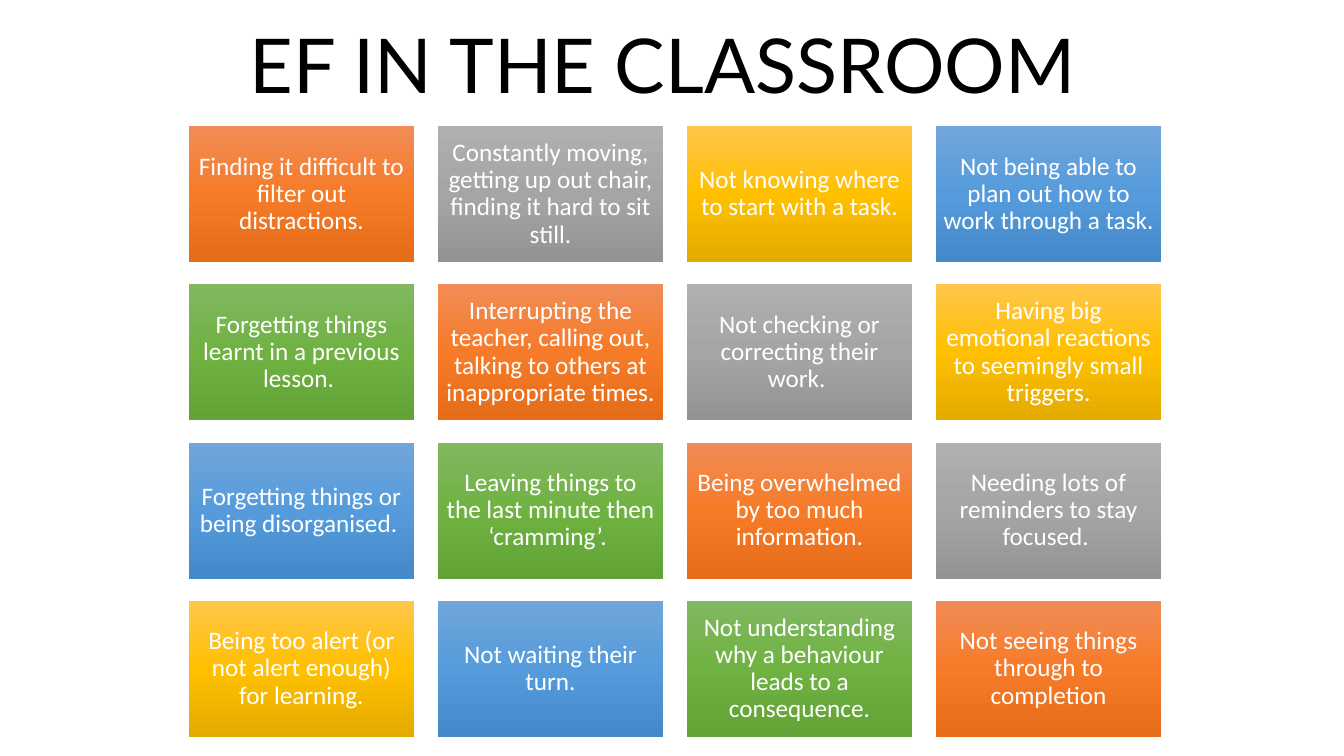
"""Build a slide with a grid of executive function signs in the classroom."""
from copy import deepcopy
from dataclasses import dataclass

from pptx import Presentation
from pptx import util as u
from pptx.dml import color
from pptx.enum import shapes, text
from pptx.oxml import ns


@dataclass(frozen=True)
class Theme:
    head_font: str = "Lato"
    body_font: str = "Calibri"
    head_size: int = 54
    body_size: int = 18
    dark: str = "000000"
    light: str = "FFFFFF"
    fades: tuple = (
        ("F18C57", "F67B28", "E56C19"),
        ("AFAFAF", "A5A5A5", "939393"),
        ("FFC64B", "FFC000", "E3AB00"),
        ("71A6DB", "559BDB", "448ACA"),
        ("81B861", "6FB242", "62A336"),
    )


THEME = Theme()
COLS = 4
LEFT, TOP = 1.87, 1.25
WIDTH, HEIGHT = 2.24, 1.35
STEP_X, STEP_Y = 2.47, 1.57

SIGNS = [
    "Finding it difficult to filter out distractions.",
    "Constantly moving, getting up out chair, finding it hard to sit still.",
    "Not knowing where to start with a task.",
    "Not being able to plan out how to work through a task.",
    "Forgetting things learnt in a previous lesson. ",
    "Interrupting the teacher, calling out, talking to others at inappropriate times.",
    "Not checking or correcting their work. ",
    "Having big emotional reactions to seemingly small triggers.",
    "Forgetting things or being disorganised. ",
    "Leaving things to the last minute then ‘cramming’. ",
    "Being overwhelmed by too much information.",
    "Needing lots of reminders to stay focused. ",
    "Being too alert (or not alert enough) for learning.",
    "Not waiting their turn.",
    "Not understanding why a behaviour leads to a consequence.",
    "Not seeing things through to completion",
]


def write(shape, words, *, font, size, ink, pad_x, pad_y):
    frame = shape.text_frame
    frame.word_wrap = True
    frame.vertical_anchor = text.MSO_ANCHOR.MIDDLE
    frame.margin_left = frame.margin_right = u.Inches(pad_x)
    frame.margin_top = frame.margin_bottom = u.Inches(pad_y)
    para = frame.paragraphs[0]
    para.alignment = text.PP_ALIGN.CENTER
    para.line_spacing = 0.9
    run = para.add_run()
    run.text = words
    run.font.name = font
    run.font.size = u.Pt(size)
    run.font.color.rgb = color.RGBColor.from_string(ink)


def fade(shape, inks):
    fill = shape.fill
    fill.gradient()
    fill.gradient_angle = 270
    stops = shape.element.spPr.find(".//" + ns.qn("a:gsLst"))
    stops.append(deepcopy(stops[-1]))
    for i, (stop, ink) in enumerate(zip(fill.gradient_stops, inks)):
        stop.position = i / (len(inks) - 1)
        stop.color.rgb = color.RGBColor.from_string(ink)


def add_title(slide, words):
    box = slide.shapes.add_textbox(
        u.Inches(0.92), u.Inches(0), u.Inches(11.5), u.Inches(1.36))
    write(box, words, font=THEME.head_font, size=THEME.head_size,
          ink=THEME.dark, pad_x=0.1, pad_y=0.05)


def add_card(slide, words, left, top, inks):
    card = slide.shapes.add_shape(
        shapes.MSO_SHAPE.RECTANGLE, u.Inches(left), u.Inches(top),
        u.Inches(WIDTH), u.Inches(HEIGHT))
    card.shadow.inherit = False
    card.line.fill.background()
    fade(card, inks)
    write(card, words, font=THEME.body_font, size=THEME.body_size,
          ink=THEME.light, pad_x=0.07, pad_y=0.07)


def main():
    deck = Presentation()
    deck.slide_width, deck.slide_height = u.Inches(13.33), u.Inches(7.5)
    slide = deck.slides.add_slide(deck.slide_layouts[6])
    add_title(slide, "EF IN THE CLASSROOM ")
    for i, words in enumerate(SIGNS):
        row, col = divmod(i, COLS)
        add_card(slide, words, LEFT + col * STEP_X, TOP + row * STEP_Y,
                 THEME.fades[i % len(THEME.fades)])
    deck.save("out.pptx")


if __name__ == "__main__":
    main()
